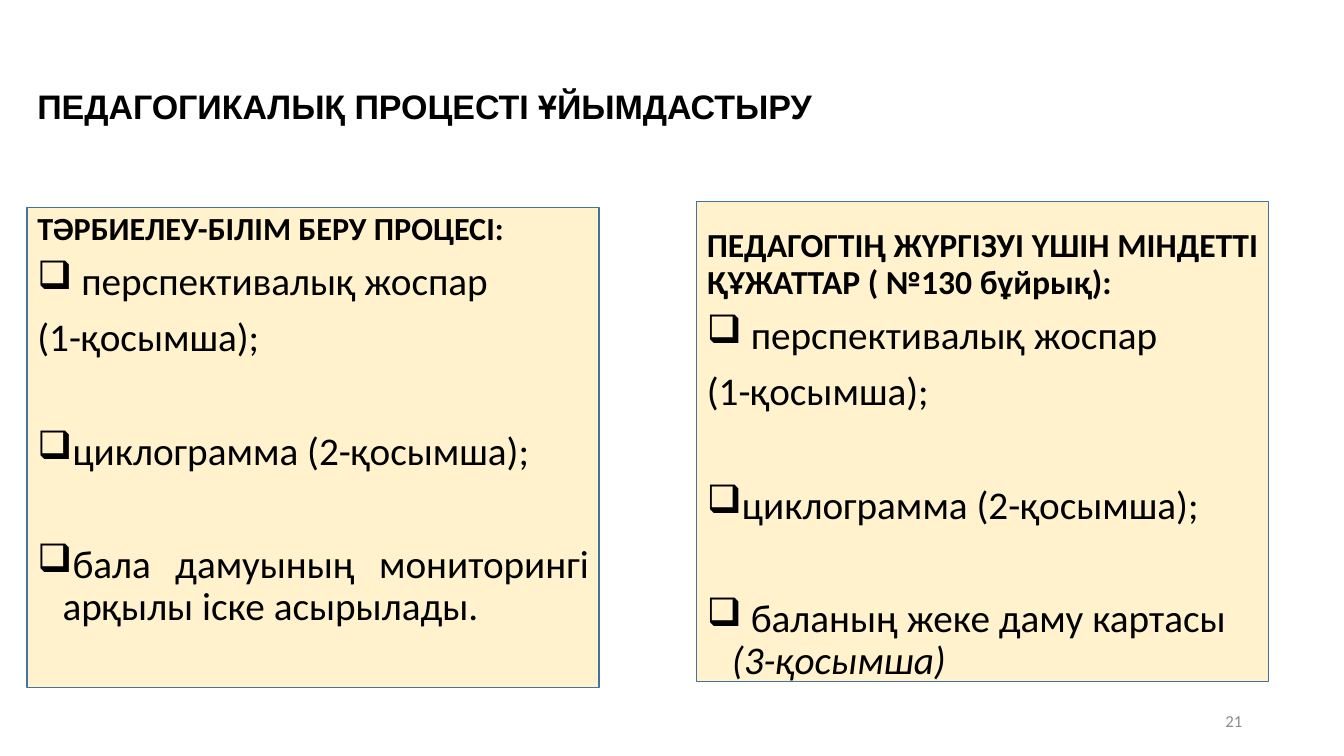
from lxml.etree import SubElement
from pptx import Presentation
from pptx.dml.color import RGBColor
from pptx.enum.shapes import MSO_SHAPE as Shape
from pptx.enum.text import MSO_ANCHOR as Anchor, MSO_AUTO_SIZE as AutoSize, PP_ALIGN as Align
from pptx.oxml.ns import qn
from pptx.util import Inches, Pt

COLORS = {"text": "000000", "panel": "FFF2CC", "border": "43739E", "number": "8C8C8C"}
PANEL_WIDTH, PANEL_HEIGHT = 5.67, 4.76
LEFT_X, RIGHT_X = 0.27, 6.91
TIGHT, WIDE = 10, 50.8


def add_run(paragraph, text, size=28, font="Calibri", color="text", bold=False, italic=False):
    run = paragraph.add_run()
    run.text = text
    run.font.name = font
    run.font.size = Pt(size)
    run.font.bold = bold
    run.font.italic = italic
    run.font.color.rgb = RGBColor.from_string(COLORS[color])


class SlideBuilder:
    def __init__(self, presentation):
        self.slide = presentation.slides.add_slide(presentation.slide_layouts[3])

    def place(self, shape, left, top, width, height, anchor):
        shape.left, shape.top = Inches(left), Inches(top)
        shape.width, shape.height = Inches(width), Inches(height)
        frame = shape.text_frame
        frame.word_wrap = True
        frame.auto_size = AutoSize.NONE
        frame.vertical_anchor = anchor
        return frame

    def panel(self, left, top):
        shape = self.slide.shapes.add_shape(
            Shape.RECTANGLE, Inches(left), Inches(top), Inches(PANEL_WIDTH), Inches(PANEL_HEIGHT))
        shape.shadow.inherit = False
        shape.fill.solid()
        shape.fill.fore_color.rgb = RGBColor.from_string(COLORS["panel"])
        shape.line.color.rgb = RGBColor.from_string(COLORS["border"])
        shape.line.width = Pt(1)
        self.slide.shapes._spTree.insert(2, shape._element)

    def title(self, text):
        frame = self.place(self.slide.shapes.title, LEFT_X, 0.4, 12.15, 1.45, Anchor.MIDDLE)
        frame.margin_bottom = Inches(0.23)
        paragraph = frame.paragraphs[0]
        paragraph.alignment = Align.LEFT
        paragraph.line_spacing = 1.07
        add_run(paragraph, text, size=24.3, font="Arial", bold=True)

    def body(self, index, left, top, heading, heading_size, items, alignment):
        frame = self.place(self.slide.placeholders[index], left, top,
                           PANEL_WIDTH, PANEL_HEIGHT, Anchor.TOP)
        paragraph = frame.paragraphs[0]
        self.format_paragraph(paragraph, Align.JUSTIFY, TIGHT, False)
        add_run(paragraph, heading, size=heading_size, bold=True)
        for text, bulleted, gap, italic_text in items:
            paragraph = frame.add_paragraph()
            self.format_paragraph(paragraph, alignment, gap, bulleted)
            add_run(paragraph, text)
            if italic_text:
                add_run(paragraph, italic_text, italic=True)

    def format_paragraph(self, paragraph, alignment, gap, bulleted):
        paragraph.alignment = alignment
        paragraph.line_spacing = 0.9
        paragraph.space_before = Pt(gap)
        indent = Inches(0.25) if bulleted else 0
        properties = paragraph._p.get_or_add_pPr()
        properties.set("marL", str(indent))
        properties.set("indent", str(-indent))
        if bulleted:
            SubElement(properties, qn("a:buFont"), typeface="Wingdings")
            SubElement(properties, qn("a:buChar"), char="q")
        else:
            SubElement(properties, qn("a:buNone"))

    def number(self, text):
        shape = self.slide.shapes.add_textbox(0, 0, 0, 0)
        frame = self.place(shape, 9.42, 6.95, 3, 0.4, Anchor.MIDDLE)
        frame.paragraphs[0].alignment = Align.RIGHT
        add_run(frame.paragraphs[0], text, size=12, color="number")


def main():
    presentation = Presentation()
    presentation.slide_width, presentation.slide_height = Inches(13.33), Inches(7.5)
    builder = SlideBuilder(presentation)
    builder.panel(LEFT_X, 2.06)
    builder.panel(RIGHT_X, 2)
    builder.title("ПЕДАГОГИКАЛЫҚ ПРОЦЕСТІ ҰЙЫМДАСТЫРУ")
    shared_items = [
        (" перспективалық жоспар", True, TIGHT, ""),
        ("(1-қосымша);", False, TIGHT, ""),
        ("циклограмма (2-қосымша);", True, WIDE, ""),
    ]
    monitoring = ("бала дамуының мониторингі арқылы іске асырылады.", True, WIDE, "")
    development_card = (" баланың жеке даму картасы ", True, WIDE, "(3-қосымша)")
    builder.body(1, LEFT_X, 2.06, "ТӘРБИЕЛЕУ-БІЛІМ БЕРУ ПРОЦЕСІ:", 23,
                 shared_items + [monitoring], Align.JUSTIFY)
    builder.body(2, RIGHT_X, 2.22, "ПЕДАГОГТІҢ ЖҮРГІЗУІ ҮШІН МІНДЕТТІ ҚҰЖАТТАР ( №130 бұйрық):", 24,
                 shared_items + [development_card], Align.LEFT)
    builder.number("21")
    presentation.save("out.pptx")


if __name__ == "__main__":
    main()
